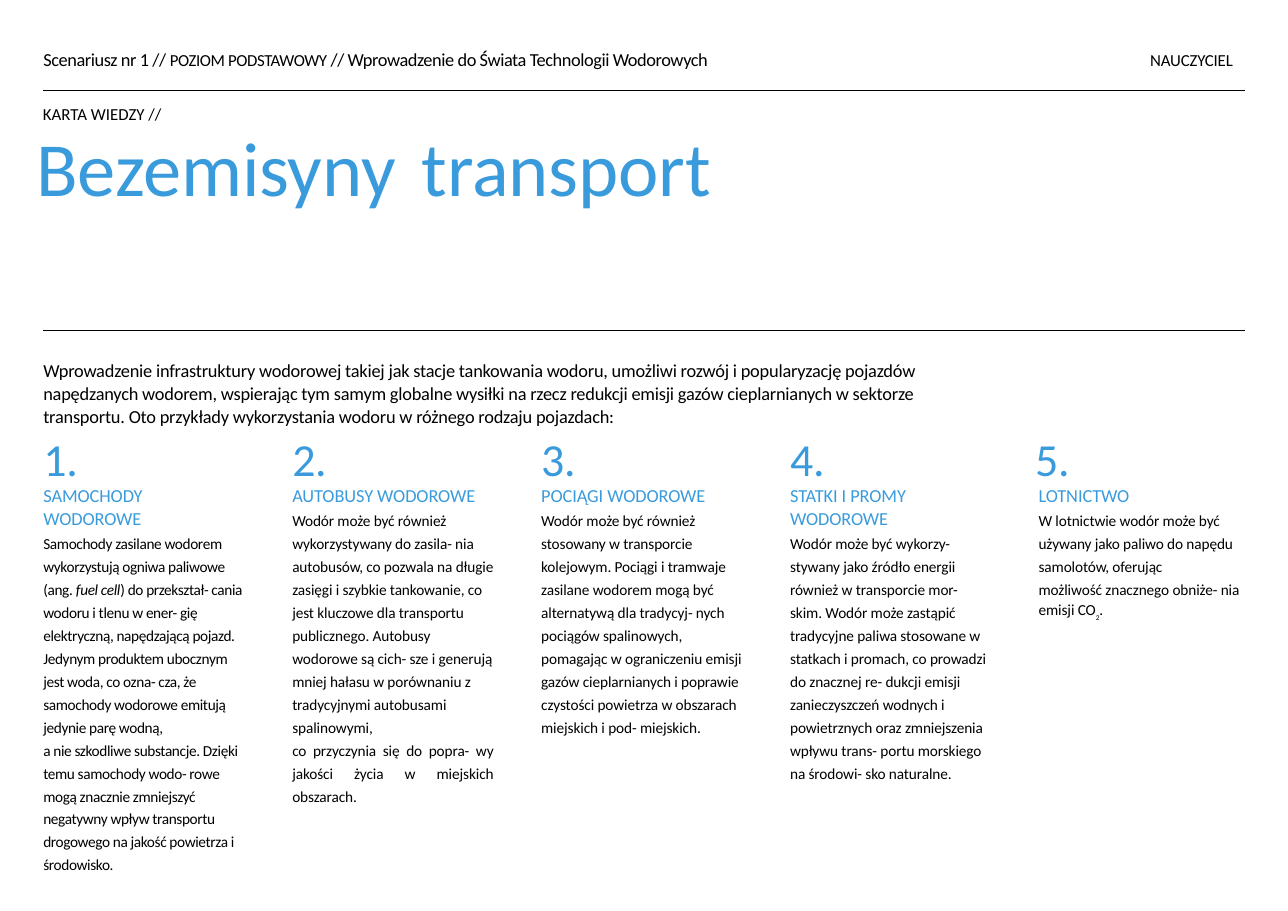
from dataclasses import dataclass

from lxml import etree
from pptx import Presentation
from pptx import util as u
from pptx.dml.color import RGBColor
from pptx.enum import shapes, text
from pptx.oxml import ns


@dataclass(frozen=True)
class Theme:
    """Colours, font and type sizes of the slide."""
    font: str = "Calibri"
    ink: RGBColor = RGBColor(0x00, 0x00, 0x00)
    accent: RGBColor = RGBColor(0x3A, 0x9B, 0xDC)
    title: float = 50
    number: float = 30
    lead: float = 12
    label: float = 11
    body: float = 10
    subscript: float = 8.2
    rule: float = 0.5


@dataclass(frozen=True)
class Section:
    """One numbered column: its heading lines, body paragraphs and box size."""
    heading: tuple
    body: tuple
    width: float
    height: float
    tracking: float = -0.05
    indents: tuple = (0.03, 0.03)
    shift: float = 0
    last_align: object = None


THEME = Theme()
MARGIN, RIGHT_EDGE, COLUMN_PITCH = 0.97, 28.7, 5.74

SECTIONS = (
    Section(
        ("SAMOCHODY", "WODOROWE"),
        (("Samochody zasilane wodorem wykorzystują ogniwa paliwowe (ang. ",
          ("fuel cell", {"italic": True}),
          ") do przekształ- cania wodoru i tlenu w ener- gię elektryczną, "
          "napędzającą pojazd. Jedynym produktem ubocznym jest woda, co ozna- cza, "
          "że samochody wodorowe emitują jedynie parę wodną,"),
         ("a nie szkodliwe substancje. Dzięki temu samochody wodo- rowe mogą "
          "znacznie zmniejszyć negatywny wpływ transportu drogowego na jakość "
          "powietrza i środowisko.",)),
        4.75, 10.19, tracking=-0.23),
    Section(
        ("AUTOBUSY WODOROWE",),
        (("Wodór może być również wykorzystywany do zasila- nia autobusów, co "
          "pozwala na długie zasięgi i szybkie tankowanie, co jest kluczowe dla "
          "transportu publicznego. Autobusy wodorowe są cich- sze i generują mniej "
          "hałasu w porównaniu z tradycyjnymi autobusami spalinowymi,",),
         ("co przyczynia się do popra- wy jakości życia w miejskich obszarach.",)),
        4.67, 8.61, last_align=text.PP_ALIGN.JUSTIFY),
    Section(
        ("POCIĄGI WODOROWE",),
        (("Wodór może być również stosowany w transporcie kolejowym. Pociągi i "
          "tramwaje zasilane wodorem mogą być alternatywą dla tradycyj- nych "
          "pociągów spalinowych, pomagając w ograniczeniu emisji gazów "
          "cieplarnianych i poprawie czystości powietrza w obszarach miejskich i "
          "pod- miejskich.",),),
        4.75, 7.54),
    Section(
        ("STATKI I PROMY", "WODOROWE"),
        (("Wodór może być wykorzy- stywany jako źródło energii również w "
          "transporcie mor- skim. Wodór może zastąpić tradycyjne paliwa stosowane "
          "w statkach i promach, co prowadzi do znacznej re- dukcji emisji "
          "zanieczyszczeń wodnych i powietrznych oraz zmniejszenia wpływu trans- "
          "portu morskiego na środowi- sko naturalne.",),),
        4.62, 8.61),
    Section(
        ("LOTNICTWO",),
        (("W lotnictwie wodór może być używany jako paliwo do napędu samolotów, "
          "oferując",),
         ("możliwość znacznego obniże- nia emisji CO",
          ("2", {"size": THEME.subscript, "baseline": -35}), ".")),
        4.93, 4.37, indents=(0.1, 0.18), shift=-0.16),
)


def add_box(slide, left, top, width, height):
    """Add an empty wrapping text box and return its text frame."""
    frame = slide.shapes.add_textbox(
        u.Cm(left), u.Cm(top), u.Cm(width), u.Cm(height)).text_frame
    frame.word_wrap = True
    frame.auto_size = text.MSO_AUTO_SIZE.SHAPE_TO_FIT_TEXT
    frame.margin_left = frame.margin_right = frame.margin_bottom = 0
    frame.margin_top = u.Cm(0.03)
    return frame


def write(frame, pieces, size, color=THEME.ink, tracking=-0.1, line=None,
          before=0, indent=0.03, align=None):
    """Write one paragraph of plain or styled pieces into the frame."""
    first = frame.paragraphs[0]
    paragraph = first if not first.runs else frame.add_paragraph()
    paragraph.space_before = u.Pt(before)
    paragraph.alignment = align
    if line:
        paragraph.line_spacing = line
    paragraph.font.name = THEME.font
    paragraph.font.size = u.Pt(size)
    paragraph.font.color.rgb = color
    properties = paragraph._p.get_or_add_pPr()
    properties.set("marL", str(u.Cm(indent)))
    properties.set("indent", "0")
    for piece in pieces:
        wording, style = (piece, {}) if isinstance(piece, str) else piece
        run = paragraph.add_run()
        run.text = wording
        run.font.name = THEME.font
        run.font.size = u.Pt(style.get("size", size))
        run.font.color.rgb = color
        run.font.italic = style.get("italic")
        run_properties = run._r.get_or_add_rPr()
        run_properties.set("spc", str(round(tracking * 100)))
        if "baseline" in style:
            run_properties.set("baseline", str(style["baseline"] * 1000))
    return paragraph


def add_rule(slide, y):
    """Draw a thin horizontal rule across the content width."""
    rule = slide.shapes.add_connector(
        shapes.MSO_CONNECTOR.STRAIGHT, u.Cm(1), u.Cm(y), u.Cm(RIGHT_EDGE), u.Cm(y))
    rule.line.color.rgb = THEME.ink
    rule.line.width = u.Pt(THEME.rule)
    etree.SubElement(rule._element.spPr, ns.qn("a:effectLst"))


def add_header(slide, left, top):
    """Place the running header, the audience label and the rule below."""
    scenario = add_box(slide, left, top, 16.87, 0.58)
    write(scenario,
          ("Scenariusz nr 1 // ", ("POZIOM PODSTAWOWY ", {"size": THEME.label}),
           "// Wprowadzenie do Świata Technologii Wodorowych"),
          THEME.lead, tracking=-0.27, before=1)
    audience = add_box(slide, left + 25.52, top + 0.05, 2.24, 0.53)
    write(audience, ("NAUCZYCIEL",), THEME.label, before=1)
    add_rule(slide, top + 1.01)


def add_title(slide, left, top):
    """Place the card label, the large title and the rule below."""
    title = add_box(slide, left, top, 17.07, 2.49)
    write(title, ("KARTA WIEDZY //",), THEME.label, tracking=0,
          line=u.Pt(10.8), before=1, indent=0.18)
    headline = write(title, ("Bezemisyny\ttransport",), THEME.title, THEME.accent,
                     line=u.Pt(57.6))
    tabs = etree.SubElement(headline._p.pPr, ns.qn("a:tabLst"))
    etree.SubElement(tabs, ns.qn("a:tab"), pos=str(u.Cm(9.7)), algn="l")
    headline._p.pPr.find(ns.qn("a:defRPr")).addprevious(tabs)
    add_rule(slide, top + 5.18)


def add_introduction(slide, left, top):
    """Place the introductory paragraph."""
    introduction = add_box(slide, left, top, 21.92, 1.63)
    write(introduction,
          ("Wprowadzenie infrastruktury wodorowej takiej jak stacje tankowania "
           "wodoru, umożliwi rozwój i popularyzację pojazdów napędzanych wodorem, "
           "wspierając tym samym globalne wysiłki na rzecz redukcji emisji gazów "
           "cieplarnianych w sektorze transportu. Oto przykłady wykorzystania "
           "wodoru w różnego rodzaju pojazdach:",),
          THEME.lead, tracking=-0.15, line=1.04, before=0.4)


def add_section(slide, section, number, left, top):
    """Place one numbered column with its heading and body."""
    column = add_box(slide, left + section.shift, top, section.width, section.height)
    number_indent, indent = section.indents
    write(column, (f"{number}.",), THEME.number, THEME.accent, -0.2,
          u.Pt(34.5), 1, number_indent)
    for index, heading in enumerate(section.heading):
        write(column, (heading,), THEME.lead, THEME.accent, -0.07,
              None if index else u.Pt(12.9), 0.6 if index else 0, indent)
    for index, pieces in enumerate(section.body):
        write(column, pieces, THEME.body, THEME.ink, section.tracking, u.Pt(15),
              0 if index else 0.6, indent, section.last_align if index else None)


def main():
    """Build the knowledge card and save it."""
    deck = Presentation()
    deck.slide_width, deck.slide_height = u.Cm(29.7), u.Cm(21)
    slide = deck.slides.add_slide(deck.slide_layouts[6])
    add_header(slide, MARGIN, 1.07)
    add_title(slide, 0.81, 2.44)
    add_introduction(slide, MARGIN, 8.23)
    for index, section in enumerate(SECTIONS):
        add_section(slide, section, index + 1, MARGIN + index * COLUMN_PITCH, 9.96)
    deck.save("out.pptx")


if __name__ == "__main__":
    main()
